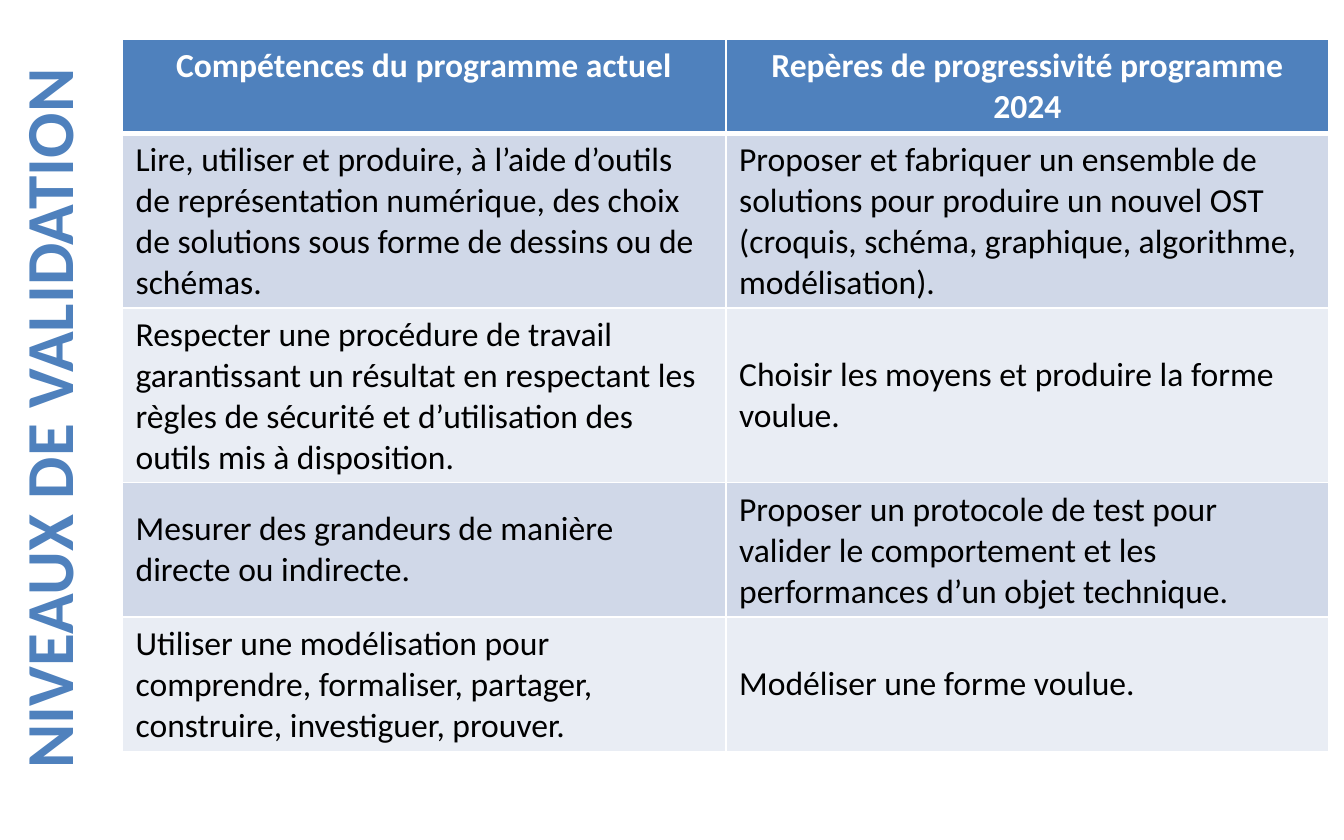
from dataclasses import dataclass

from lxml.etree import SubElement
from pptx import Presentation
from pptx.dml.color import RGBColor as Rgb
from pptx.enum.text import MSO_ANCHOR as Anchor, PP_ALIGN as Align
from pptx.oxml.ns import qn
from pptx.util import Cm, Pt


@dataclass(frozen=True)
class Theme:
    """Colours, font and type sizes of the slide."""
    font: str = "Calibri"
    blue: str = "4F81BD"
    white: str = "FFFFFF"
    black: str = "000000"
    bands: tuple = ("D0D8E8", "E9EDF4")
    title: int = 36
    body: int = 18
    thin: int = 1
    thick: int = 3


THEME = Theme()
TITLE = "NIVEAUX DE VALIDATION"
HEAD = ("Compétences du programme actuel", "Repères de progressivité programme 2024")
SKILLS = (
    ("Lire, utiliser et produire, à l’aide d’outils de représentation numérique, "
     "des choix de solutions sous forme de dessins ou de schémas.",
     "Proposer et fabriquer un ensemble de solutions pour produire un nouvel OST "
     "(croquis, schéma, graphique, algorithme, modélisation)."),
    ("Respecter une procédure de travail garantissant un résultat en respectant "
     "les règles de sécurité et d’utilisation des outils mis à disposition.",
     "Choisir les moyens et produire la forme voulue."),
    ("Mesurer des grandeurs de manière directe ou indirecte.",
     "Proposer un protocole de test pour valider le comportement et les "
     "performances d’un objet technique."),
    ("Utiliser une modélisation pour comprendre, formaliser, partager, "
     "construire, investiguer, prouver.",
     "Modéliser une forme voulue."),
)
HEIGHTS = (1.76, 3.3, 3.3, 2.54, 2.54)


def write(frame, text, size, color, bold=False, align=Align.LEFT):
    """Put one styled paragraph in a text frame."""
    frame.text = text
    para = frame.paragraphs[0]
    para.alignment = align
    font = para.runs[0].font
    font.name, font.size, font.bold = THEME.font, Pt(size), bold
    font.color.rgb = Rgb.from_string(color)


def edge(cell, side, width):
    """Draw one white border of a cell."""
    line = SubElement(cell._tc.get_or_add_tcPr(), qn(f"a:ln{side}"), w=str(Pt(width)))
    fill = SubElement(line, qn("a:solidFill"))
    SubElement(fill, qn("a:srgbClr"), val=THEME.white)


def add_title(slide, left, top, width, height):
    """Fill an upright box with the title, read from bottom to top."""
    box = slide.shapes.add_textbox(
        Cm(left + (width - height) / 2), Cm(top + (height - width) / 2),
        Cm(height), Cm(width))
    box.rotation = 270
    box.text_frame.word_wrap = True
    write(box.text_frame, TITLE, THEME.title, THEME.blue, True, Align.CENTER)


def fill_cell(cell, text, row):
    """Write and style one cell according to its row."""
    head = row == 0
    if head:
        write(cell.text_frame, text, THEME.body, THEME.white, True, Align.CENTER)
    else:
        write(cell.text_frame, text, THEME.body, THEME.black)
        cell.vertical_anchor = Anchor.MIDDLE
    edge(cell, "L", THEME.thin)
    edge(cell, "R", THEME.thin)
    edge(cell, "T", THEME.thick if row == 1 else THEME.thin)
    edge(cell, "B", THEME.thick if head else THEME.thin)
    color = THEME.blue if head else THEME.bands[(row - 1) % 2]
    cell.fill.solid()
    cell.fill.fore_color.rgb = Rgb.from_string(color)


def add_skills(slide, left, top, width):
    """Place the table of skills across the given width."""
    rows = (HEAD, *SKILLS)
    table = slide.shapes.add_table(
        len(rows), len(HEAD), Cm(left), Cm(top), Cm(width), Cm(sum(HEIGHTS))).table
    for row, (texts, height) in enumerate(zip(rows, HEIGHTS)):
        table.rows[row].height = Cm(height)
        for col, text in enumerate(texts):
            fill_cell(table.cell(row, col), text, row)


def main():
    """Build and save the slide."""
    deck = Presentation()
    deck.slide_width, deck.slide_height = Cm(25.4), Cm(15.88)
    slide = deck.slides.add_slide(deck.slide_layouts[6])
    add_title(slide, 0, -0.05, 1.8, 15.93)
    add_skills(slide, 2.31, 0.74, 22.81)
    deck.save("out.pptx")


if __name__ == "__main__":
    main()
